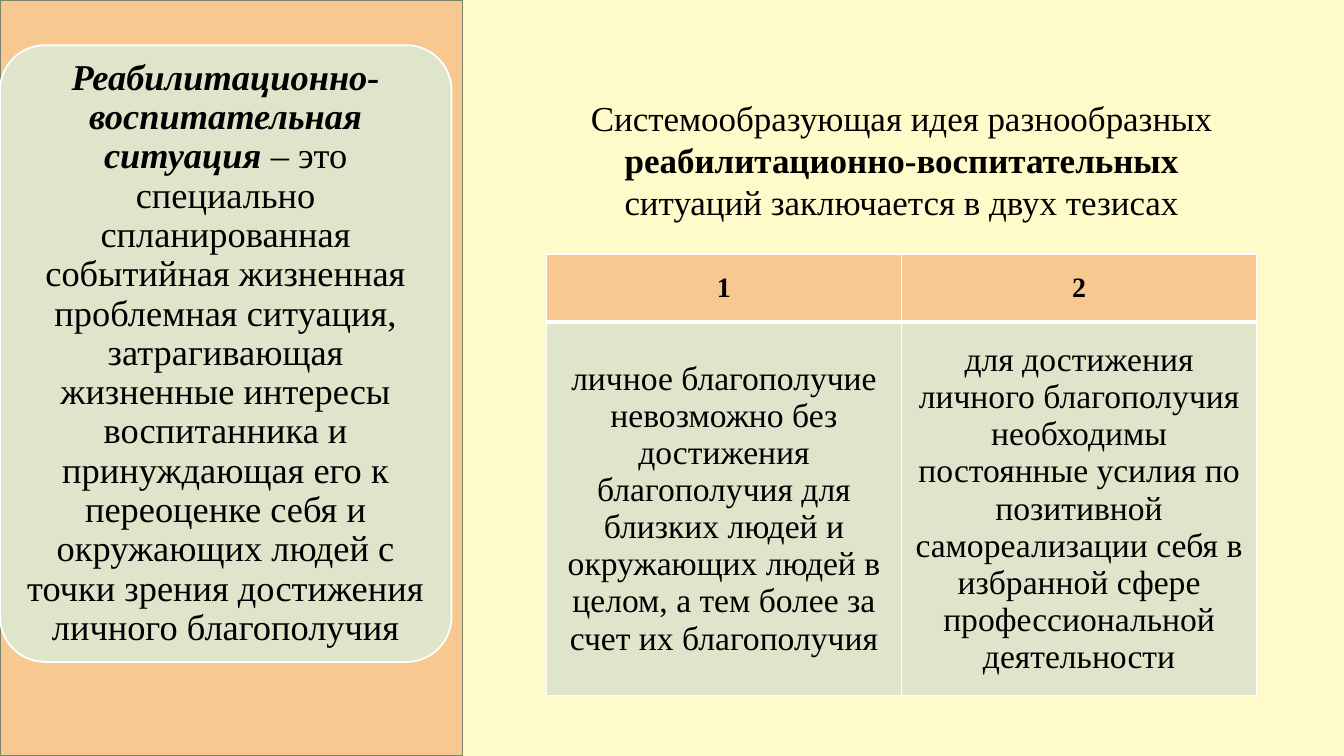
from lxml import etree
from pptx import Presentation
from pptx.dml.color import RGBColor
from pptx.enum.shapes import MSO_SHAPE
from pptx.enum.text import MSO_ANCHOR, MSO_AUTO_SIZE, PP_ALIGN
from pptx.oxml.ns import qn
from pptx.util import Cm, Pt

RECTANGLE = MSO_SHAPE.RECTANGLE
ROUNDED = MSO_SHAPE.ROUNDED_RECTANGLE
MIDDLE = MSO_ANCHOR.MIDDLE
CENTER = PP_ALIGN.CENTER
FIT_SHAPE = MSO_AUTO_SIZE.SHAPE_TO_FIT_TEXT

FONT = "Times New Roman"
COLORS = {
    "background": "FEFAC9",
    "peach": "F8C891",
    "sage": "DFE5CA",
    "panel_line": "7A866C",
    "white": "FFFFFF",
    "text": "000000",
}
DEFINITION = [
    ("Реабилитационно-воспитательная ситуация ", True, True),
    ("– это специально спланированная событийная жизненная проблемная "
     "ситуация, затрагивающая жизненные интересы воспитанника и "
     "принуждающая его к переоценке себя и окружающих людей с точки "
     "зрения достижения личного благополучия", False, False),
]
IDEA = [
    ("Системообразующая идея разнообразных ", False, False),
    ("реабилитационно-воспитательных", True, False),
    (" ситуаций заключается в двух тезисах", False, False),
]
THESES = [
    ("1", "личное благополучие невозможно без достижения благополучия для "
          "близких людей и окружающих людей в целом, а тем более за счет их "
          "благополучия"),
    ("2", "для достижения личного благополучия необходимы постоянные усилия "
          "по позитивной самореализации себя в избранной сфере "
          "профессиональной деятельности"),
]


def color(name):
    return RGBColor.from_string(COLORS[name])


def paint(fill, name):
    fill.solid()
    fill.fore_color.rgb = color(name)


def write_runs(text_frame, runs, size):
    text_frame.word_wrap = True
    text_frame.vertical_anchor = MIDDLE
    paragraph = text_frame.paragraphs[0]
    paragraph.alignment = CENTER
    for text, bold, italic in runs:
        run = paragraph.add_run()
        run.text = text
        run.font.name = FONT
        run.font.size = Pt(size)
        run.font.bold = bold
        run.font.italic = italic
        run.font.color.rgb = color("text")
    return paragraph


def add_panel(slide, kind, box, fill, line):
    shape = slide.shapes.add_shape(kind, *map(Cm, box))
    shape.shadow.inherit = False
    paint(shape.fill, fill)
    shape.line.color.rgb = color(line)
    shape.line.width = Pt(1.25)
    return shape


def add_definition(slide):
    card = add_panel(slide, ROUNDED, (0, 1.14, 11.38, 15.54), "sage", "white")
    card.adjustments[0] = 0.1
    text_frame = card.text_frame
    text_frame.margin_left = text_frame.margin_right = Cm(0.28)
    text_frame.margin_top = text_frame.margin_bottom = Cm(0.28)
    paragraph = write_runs(text_frame, DEFINITION, 26)
    paragraph.line_spacing = 0.9


def place_title(slide):
    title = slide.shapes.title
    title.left, title.top = Cm(13.77), Cm(2.29)
    title.width, title.height = Cm(17.9), Cm(3.45)
    write_runs(title.text_frame, IDEA, 25)
    title.text_frame.auto_size = FIT_SHAPE


def set_borders(cell, widths):
    properties = cell._tc.get_or_add_tcPr()
    for index, (side, width) in enumerate(widths.items()):
        line = etree.Element(qn(f"a:{side}"), w=str(Pt(width)))
        fill = etree.SubElement(line, qn("a:solidFill"))
        etree.SubElement(fill, qn("a:srgbClr"), val=COLORS["white"])
        properties.insert(index, line)


def add_theses(slide):
    frame = slide.shapes.add_table(
        2, len(THESES), Cm(13.77), Cm(6.4), Cm(17.9), Cm(11.12))
    table = frame.table
    table.rows[0].height = Cm(1.72)
    table.rows[1].height = Cm(9.4)
    row_styles = [("peach", 20, True, 1, 3), ("sage", 24, False, 3, 1)]
    for column, thesis in enumerate(THESES):
        for row, (fill, size, bold, top, bottom) in enumerate(row_styles):
            cell = table.cell(row, column)
            cell.vertical_anchor = MIDDLE
            paint(cell.fill, fill)
            write_runs(cell.text_frame, [(thesis[row], bold, False)], size)
            set_borders(cell, {"lnL": 1, "lnR": 1, "lnT": top, "lnB": bottom})


def main():
    presentation = Presentation()
    presentation.slide_width = Cm(33.87)
    presentation.slide_height = Cm(19.05)
    slide = presentation.slides.add_slide(presentation.slide_layouts[5])
    paint(slide.background.fill, "background")
    add_panel(slide, RECTANGLE, (0, 0, 11.66, 19.05), "peach", "panel_line")
    add_definition(slide)
    place_title(slide)
    add_theses(slide)
    presentation.save("out.pptx")


if __name__ == "__main__":
    main()
